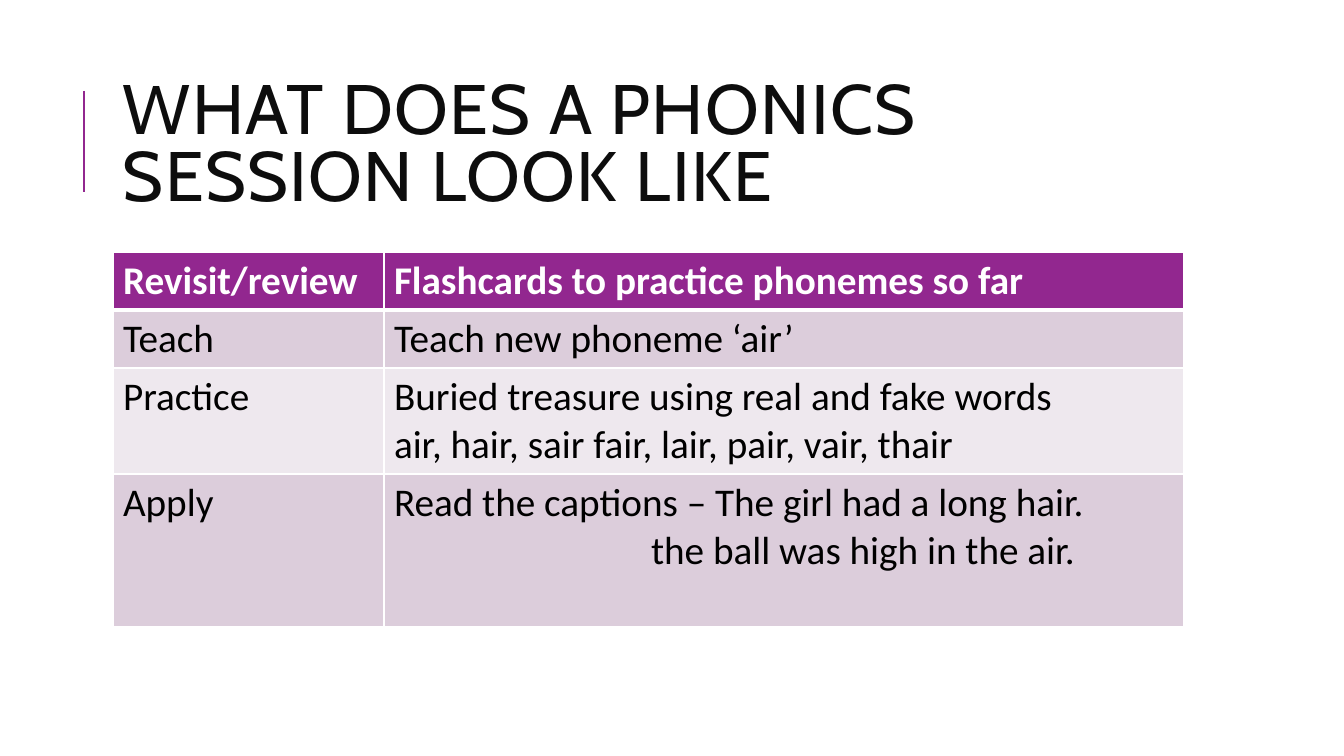
from lxml.etree import SubElement as Sub
from pptx import Presentation
from pptx.dml.color import RGBColor
from pptx.enum.shapes import MSO_CONNECTOR as Conn
from pptx.enum.text import MSO_ANCHOR as Anchor
from pptx.oxml import parse_xml
from pptx.oxml.ns import nsdecls, qn
from pptx.util import Emu, Pt

PLUM, WHITE, BLACK, INK = "92278F", "FFFFFF", "000000", "0D0D0D"
BANDS = "DCCDDB", "EEE8EE"


def px(num):
    """Turn pixels into EMU."""
    return Emu(round(num * 914400 / 100.8))


def tint(code):
    """Turn a hex string into a colour."""
    return RGBColor.from_string(code)


def write(par, text, font="Calibri", size=28, color=BLACK, bold=False, track=0, left=0):
    """Add one formatted run to a paragraph."""
    run = par.add_run()
    run.text = text
    run.font.name, run.font.size, run.font.bold = font, Pt(size), bold
    run.font.color.rgb = tint(color)
    if track:
        run.font._element.set("spc", str(track * 100))
    if left:
        props = par._p.get_or_add_pPr()
        props.set("marL", str(px(left)))
        props.set("indent", "0")


class Deck:
    """Hold the style and the current slide."""

    def __init__(self):
        """Open a blank slide."""
        self.prs = Presentation()
        self.prs.slide_width, self.prs.slide_height = px(1344), px(756)
        self.slide = self.prs.slides.add_slide(self.prs.slide_layouts[6])

    def rule(self, x, top, end):
        """Draw an upright accent line."""
        line = self.slide.shapes.add_connector(Conn.STRAIGHT, px(x), px(top), px(x), px(end))
        line.line.color.rgb = tint(PLUM)
        line.line.width = Pt(1.5)
        Sub(line._element.spPr, qn("a:effectLst"))

    def title(self, text, *box):
        """Place the heading."""
        frame = self.slide.shapes.add_textbox(*map(px, box)).text_frame
        frame.word_wrap = True
        frame.vertical_anchor = Anchor.MIDDLE
        par = frame.paragraphs[0]
        par.line_spacing = 0.8
        write(par, text, font="Cabin", size=50, color=INK, track=1)

    def edge(self, cell, base):
        """Give a cell white borders."""
        props = cell._tc.get_or_add_tcPr()
        for spot, (side, wide) in enumerate(zip("LRTB", (1, 1, 1, base))):
            props.insert(spot, parse_xml(
                f'<a:ln{side} {nsdecls("a")} w="{Pt(wide)}"><a:solidFill>'
                f'<a:srgbClr val="{WHITE}"/></a:solidFill></a:ln{side}>'))

    def cell(self, cell, lines, row):
        """Fill one cell with its lines of text."""
        head = row == 0
        cell.fill.solid()
        cell.fill.fore_color.rgb = tint(PLUM if head else BANDS[(row - 1) % 2])
        self.edge(cell, 3 if head else 1)
        frame = cell.text_frame
        for num, (text, left) in enumerate(lines):
            par = frame.add_paragraph() if num else frame.paragraphs[0]
            write(par, text, color=WHITE if head else BLACK, bold=head, left=left)

    def table(self, x, y, wides, rows):
        """Build the table from row heights, labels and lines."""
        size = px(sum(wides)), px(sum(row[0] for row in rows))
        grid = self.slide.shapes.add_table(len(rows), len(wides), px(x), px(y), *size).table
        for col, wide in zip(grid.columns, wides):
            col.width = px(wide)
        for num, (high, label, *lines) in enumerate(rows):
            grid.rows[num].height = px(high)
            self.cell(grid.cell(num, 0), [(label, 0)], num)
            self.cell(grid.cell(num, 1), lines, num)


def main():
    """Build and save the slide."""
    deck = Deck()
    deck.rule(84, 91, 192)
    deck.title("WHAT DOES A PHONICS SESSION LOOK LIKE", 113, 65, 1071, 165)
    deck.table(113, 252, (271, 800), [
        (58, "Revisit/review", ("Flashcards to practice phonemes so far", 0)),
        (58, "Teach", ("Teach new phoneme ‘air’", 0)),
        (106, "Practice", ("Buried treasure using real and fake words", 0),
         ("air, hair, sair fair, lair, pair, vair, thair", 0)),
        (153, "Apply", ("Read the captions – The girl had a long hair.", 0),
         ("the ball was high in the air.", 257)),
    ])
    deck.prs.save("out.pptx")


if __name__ == "__main__":
    main()
